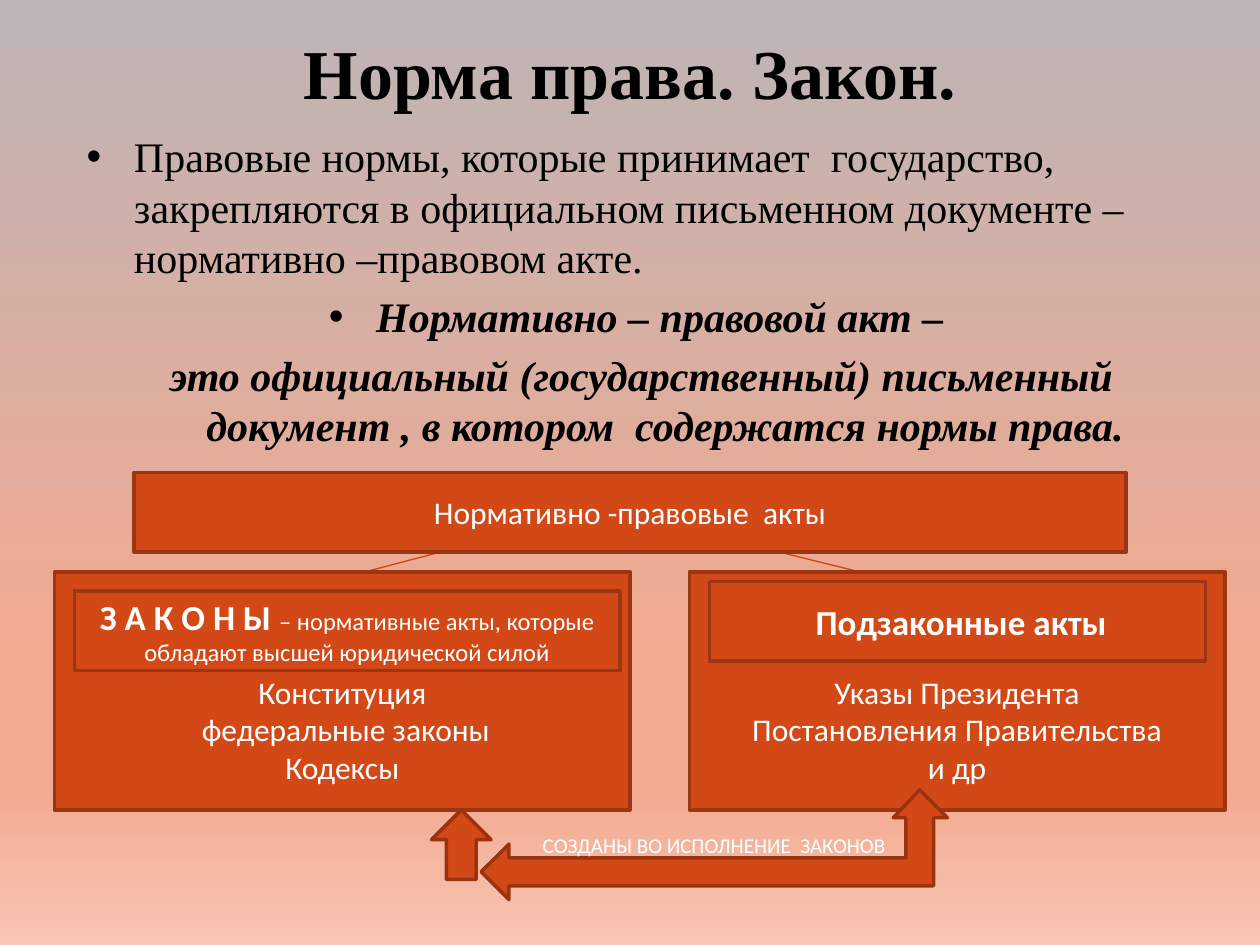
import pptx
import pptx.util
import pptx.dml.color
import pptx.enum.shapes
import pptx.enum.text
import pptx.oxml
import pptx.oxml.ns

Pt = pptx.util.Pt
SHAPE = pptx.enum.shapes.MSO_SHAPE
MIDDLE = pptx.enum.text.MSO_ANCHOR.MIDDLE
TOP = pptx.enum.text.MSO_ANCHOR.TOP
CENTER = pptx.enum.text.PP_ALIGN.CENTER
LEFT = pptx.enum.text.PP_ALIGN.LEFT
SERIF = "Times New Roman"


def color(value):
    return pptx.dml.color.RGBColor.from_string(value)


def write(para, text, size=18, font="Calibri", fill="FFFFFF", bold=False, italic=False, align=CENTER):
    para.alignment = align
    span = para.add_run()
    span.text = text
    span.font.size = Pt(size)
    span.font.name = font
    span.font.color.rgb = color(fill)
    span.font.bold = bold
    span.font.italic = italic


deck = pptx.Presentation()
deck.slide_width, deck.slide_height = Pt(720), Pt(540)
page = deck.slides.add_slide(deck.slide_layouts[5])

page.background.fill.gradient()
page.background.fill.gradient_angle = 270
stops = page.background.fill._fill._gradFill.find(pptx.oxml.ns.qn("a:gsLst"))
for stop in list(stops):
    stops.remove(stop)
for percent, value in [(0, "BDB5B6"), (70, "F3A98F"), (83, "F3A98F"), (100, "F7C6B4")]:
    stops.append(pptx.oxml.parse_xml(
        f'<a:gs {pptx.oxml.ns.nsdecls("a")} pos="{percent * 1000}"><a:srgbClr val="{value}"/></a:gs>'))

title = page.shapes.title
title.left, title.top, title.width, title.height = Pt(36), Pt(21.6), Pt(648), Pt(39)
title.text_frame.vertical_anchor = MIDDLE
write(title.text_frame.paragraphs[0], "Норма права. Закон.", size=40, font=SERIF, fill="000000", bold=True)

body = page.shapes.add_textbox(Pt(42.5), Pt(71.3), Pt(648), Pt(424))
body.text_frame.word_wrap = True
body.text_frame.vertical_anchor = TOP
statements = [
    ("Правовые нормы, которые принимает  государство, закрепляются в официальном письменном "
     "документе – нормативно –правовом акте.", LEFT, True),
    ("Нормативно – правовой акт – ", CENTER, True),
    ("это официальный (государственный) письменный документ , в котором  содержатся нормы права.",
     CENTER, False),
]
for index, (text, align, bulleted) in enumerate(statements):
    para = body.text_frame.paragraphs[0] if index == 0 else body.text_frame.add_paragraph()
    strong = align == CENTER
    write(para, text, size=24, font=SERIF, fill="000000", bold=strong, italic=strong, align=align)
    para.space_before = Pt(4.8)
    properties = para._p.get_or_add_pPr()
    properties.set("marL", str(Pt(27)))
    properties.set("indent", str(-Pt(27)))
    if bulleted:
        for tag in ('buFont typeface="Arial"', 'buChar char="•"'):
            properties.append(pptx.oxml.parse_xml(f'<a:{tag} {pptx.oxml.ns.nsdecls("a")}/>'))

connectors = [(252, 315.4, 167, 337.7), (445, 315.4, 558.7, 343.4)]
for ends in connectors:
    link = page.shapes.add_connector(pptx.enum.shapes.MSO_CONNECTOR.STRAIGHT, *map(Pt, ends))
    link.line.color.rgb = color("D34412")
    link.line.width = Pt(0.75)
    link.line._get_or_add_ln().append(
        pptx.oxml.parse_xml(f'<a:tailEnd {pptx.oxml.ns.nsdecls("a")} type="arrow"/>'))
    link._element.spPr.append(pptx.oxml.parse_xml(f'<a:effectLst {pptx.oxml.ns.nsdecls("a")}/>'))

outline = [(290.9, 482.4), (290.9, 490.3), (517.7, 490.3), (517.7, 467.3), (510.5, 467.3),
           (525.6, 451.4), (541.4, 467.3), (533.5, 467.3), (533.5, 506.2), (290.9, 506.2),
           (290.9, 514.1)]
builder = page.shapes.build_freeform(Pt(275), Pt(498.2))
builder.add_line_segments([(Pt(x), Pt(y)) for x, y in outline], close=True)

laws = ["Конституция", " федеральные законы", "Кодексы"]
bylaws = ["Указы Президента", "Постановления Правительства", "и др"]
boxes = [
    (SHAPE.RECTANGLE, 76.5, 270, 567, 45.4, 3.6, [[("Нормативно -правовые  акты", 18, False)]]),
    (SHAPE.RECTANGLE, 31.2, 326.8, 328.8, 136, 47.5, [[(line, 18, False)] for line in laws]),
    (SHAPE.RECTANGLE, 393.9, 326.8, 306, 136, 47.5, [[(line, 18, False)] for line in bylaws]),
    (SHAPE.RECTANGLE, 42.5, 337.9, 311.8, 45.4, 3.6,
     [[("З А К О Н Ы ", 20, True),
       ("– нормативные акты, которые обладают высшей юридической силой", 14, False)]]),
    (SHAPE.RECTANGLE, 405.3, 332.4, 283.5, 45.4, 3.6, [[(" Подзаконные акты", 20, True)]]),
    (None, 0, 0, 0, 0, 3.6, [[("СОЗДАНЫ ВО ИСПОЛНЕНИЕ  ЗАКОНОВ", 12, False)]]),
    (SHAPE.UP_ARROW, 246.6, 462.8, 34, 39.7, 3.6, []),
]
for kind, left, top, width, height, inset, lines in boxes:
    if kind is None:
        box = builder.convert_to_shape()
    else:
        box = page.shapes.add_shape(kind, Pt(left), Pt(top), Pt(width), Pt(height))
    box.shadow.inherit = False
    box.fill.solid()
    box.fill.fore_color.rgb = color("D34817")
    box.line.color.rgb = color("9C3511" if kind == SHAPE.RECTANGLE else "9B320E")
    box.line.width = Pt(2)
    frame = box.text_frame
    frame.word_wrap = True
    frame.vertical_anchor = MIDDLE
    frame.margin_top = Pt(inset)
    for index, spans in enumerate(lines):
        para = frame.paragraphs[0] if index == 0 else frame.add_paragraph()
        for text, size, bold in spans:
            write(para, text, size=size, bold=bold)

deck.save("out.pptx")
